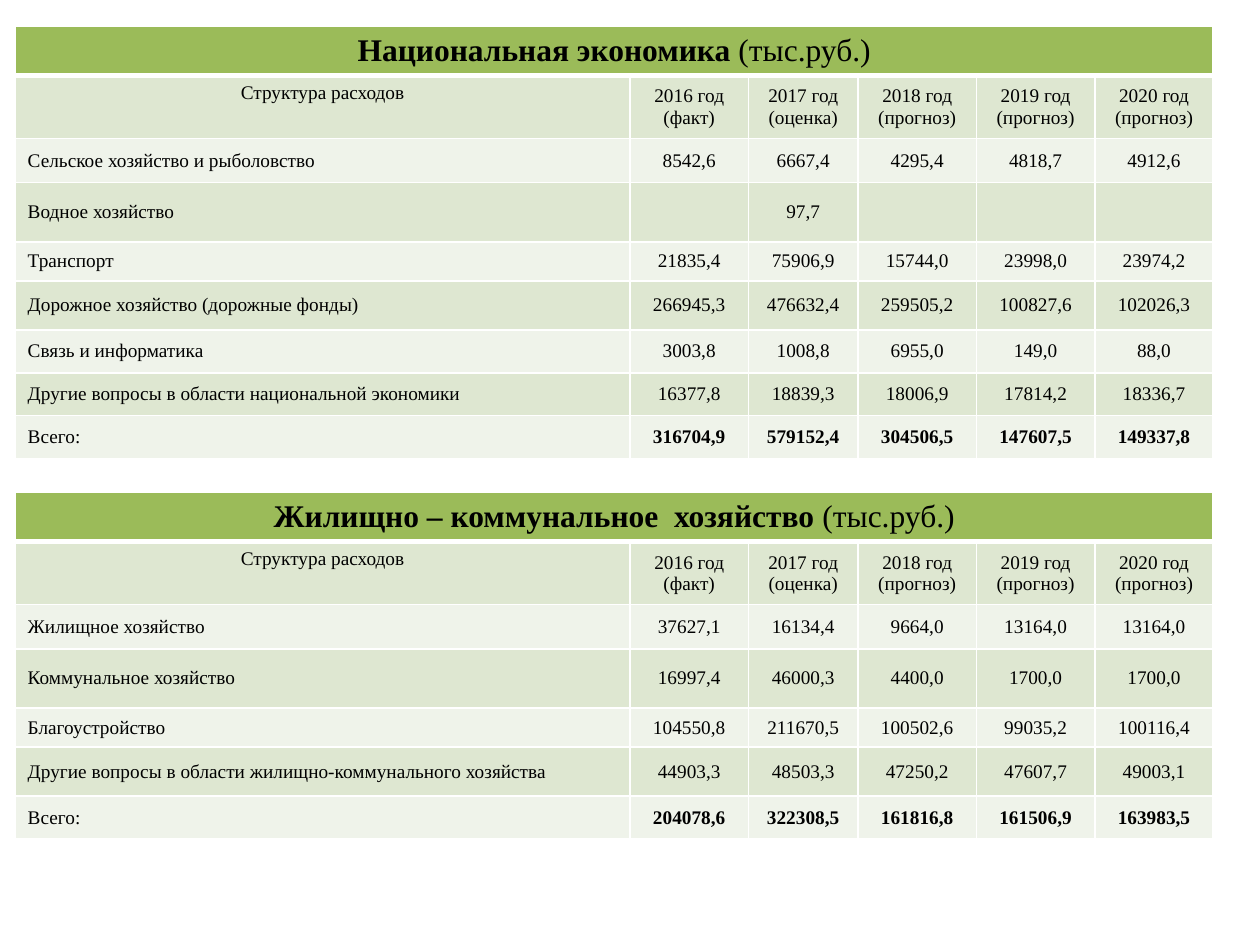
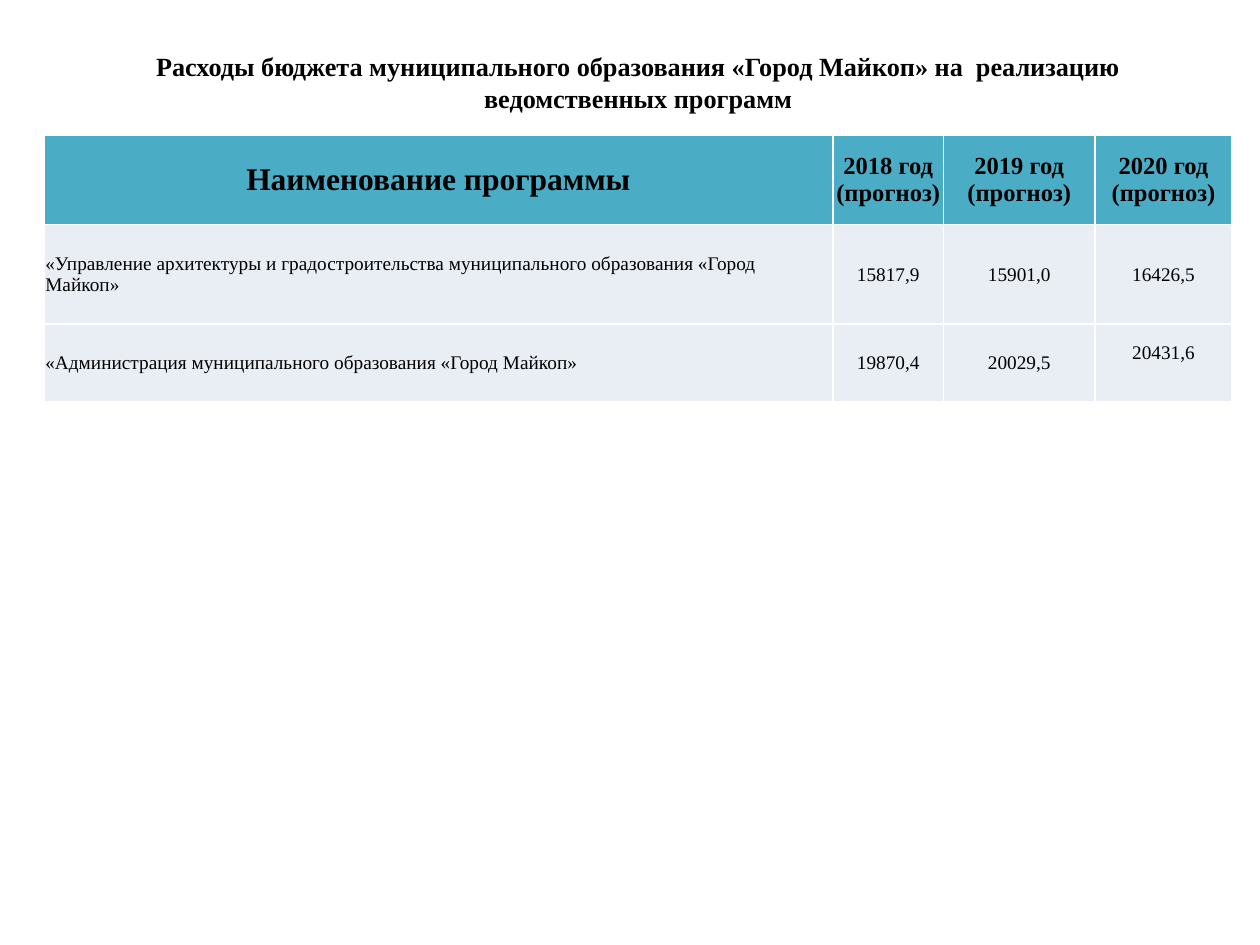
"""Builds two budget slides with expenditure tables."""
from lxml.etree import SubElement
from pptx import Presentation
from pptx.dml.color import RGBColor
from pptx.enum.text import MSO_ANCHOR, PP_ALIGN
from pptx.oxml.ns import qn
from pptx.util import Inches, Pt

COLORS = {
    "text": "000000", "border": "FFFFFF",
    "green": "9BBB59", "green_dark": "DEE7D1", "green_light": "EFF3EA",
    "teal": "4BACC6", "blue_light": "E9EDF4",
}
FONT = "Times New Roman"
GRID_COLUMNS, GRID_ROWS = 100, 75

YEARS = ["2016 год\n(факт)", "2017 год\n(оценка)", "2018 год\n(прогноз)",
         "2019 год\n(прогноз)", "2020 год\n(прогноз)"]
ECONOMY = [
    ("Сельское хозяйство и рыболовство", "8542,6|6667,4|4295,4|4818,7|4912,6"),
    ("Водное хозяйство", "|97,7|||"),
    ("Транспорт", "21835,4|75906,9|15744,0|23998,0|23974,2"),
    ("Дорожное хозяйство (дорожные фонды)", "266945,3|476632,4|259505,2|100827,6|102026,3"),
    ("Связь и информатика", "3003,8|1008,8|6955,0|149,0|88,0"),
    ("Другие вопросы в области национальной экономики", "16377,8|18839,3|18006,9|17814,2|18336,7"),
    ("Всего:", "316704,9|579152,4|304506,5|147607,5|149337,8"),
]
HOUSING = [
    ("Жилищное хозяйство", "37627,1|16134,4|9664,0|13164,0|13164,0"),
    ("Коммунальное хозяйство", "16997,4|46000,3|4400,0|1700,0|1700,0"),
    ("Благоустройство", "104550,8|211670,5|100502,6|99035,2|100116,4"),
    ("Другие вопросы в области жилищно-коммунального хозяйства", "44903,3|48503,3|47250,2|47607,7|49003,1"),
    ("Всего:", "204078,6|322308,5|161816,8|161506,9|163983,5"),
]
PROGRAMS = [
    ("«Управление архитектуры и градостроительства муниципального образования «Город Майкоп»",
     "15817,9|15901,0|16426,5"),
    ("«Администрация муниципального образования «Город Майкоп»", "19870,4|20029,5|20431,6"),
]
SECTOR_WIDTHS = [48.8, 9.4, 8.7, 9.4, 9.4, 9.4]
SECTOR_HEIGHTS = [3.9, 5, 3.5, 4.7, 3.1, 3.9, 3.4, 3.4, 3.4]


def write(frame, text, size=11, bold=False, centered=True, note=""):
    """Write one paragraph per line, with an optional regular-weight note at the end."""
    for index, line in enumerate(text.split("\n")):
        paragraph = frame.add_paragraph() if index else frame.paragraphs[0]
        paragraph.alignment = PP_ALIGN.CENTER if centered else PP_ALIGN.LEFT
        for content, weight in ((line, bold), (note, False)):
            if content:
                run = paragraph.add_run()
                run.text = content
                run.font.name, run.font.size, run.font.bold = FONT, Pt(size), weight
                run.font.color.rgb = RGBColor.from_string(COLORS["text"])


class Deck:
    """Holds the presentation, its grid and the current slide."""

    def __init__(self):
        """Start a 4:3 presentation."""
        self.presentation = Presentation()
        self.presentation.slide_width, self.presentation.slide_height = Inches(10), Inches(7.5)
        self.slide = None

    def columns(self, count):
        """Convert grid columns to a length."""
        return int(self.presentation.slide_width * count / GRID_COLUMNS)

    def rows(self, count):
        """Convert grid rows to a length."""
        return int(self.presentation.slide_height * count / GRID_ROWS)

    def new_slide(self):
        """Add a blank slide and make it current."""
        self.slide = self.presentation.slides.add_slide(self.presentation.slide_layouts[6])

    def title(self, text, left, top, width, height):
        """Add a bold centred slide title."""
        box = self.slide.shapes.add_textbox(
            self.columns(left), self.rows(top), self.columns(width), self.rows(height))
        box.text_frame.word_wrap = True
        write(box.text_frame, text, size=15, bold=True)

    def table(self, left, top, widths, heights):
        """Add a plain table with the given column widths and row heights."""
        table = self.slide.shapes.add_table(
            len(heights), len(widths), self.columns(left), self.rows(top),
            self.columns(sum(widths)), self.rows(sum(heights))).table
        table.first_row = table.horz_banding = False
        for column, width in zip(table.columns, widths):
            column.width = self.columns(width)
        for row, height in zip(table.rows, heights):
            row.height = self.rows(height)
        return table

    def cell(self, cell, text, fill, bottom_line=1, tight=False, **text_format):
        """Border, fill and write one table cell."""
        properties = cell._tc.get_or_add_tcPr()
        for side, width in (("L", 1), ("R", 1), ("T", 1), ("B", bottom_line)):
            line = SubElement(properties, qn(f"a:ln{side}"), w=str(Pt(width)))
            SubElement(SubElement(line, qn("a:solidFill")), qn("a:srgbClr"), val=COLORS["border"])
        cell.fill.solid()
        cell.fill.fore_color.rgb = RGBColor.from_string(COLORS[fill])
        cell.vertical_anchor = MSO_ANCHOR.MIDDLE
        if tight:
            cell.margin_left = cell.margin_right = cell.margin_top = self.columns(0.1)
            cell.margin_bottom = 0
        write(cell.text_frame, text, **text_format)

    def sector_table(self, top, heading, records):
        """Add a green expenditure table for one budget sector."""
        table = self.table(1.2, top, SECTOR_WIDTHS, SECTOR_HEIGHTS[:len(records) + 2])
        table.cell(0, 0).merge(table.cell(0, len(YEARS)))
        self.cell(table.cell(0, 0), heading, "green", bottom_line=3,
                  size=18, bold=True, note="(тыс.руб.)")
        lines = [["Структура расходов", *YEARS]]
        lines += [[name, *values.split("|")] for name, values in records]
        for row, line in enumerate(lines, 1):
            for column, text in enumerate(line):
                self.cell(table.cell(row, column), text,
                          "green_dark" if row % 2 else "green_light",
                          bold=row == len(lines) and column > 0,
                          centered=row == 1 or column > 0)
        table.cell(1, 0).vertical_anchor = MSO_ANCHOR.TOP

    def program_table(self):
        """Add the teal table of departmental programmes."""
        table = self.table(3.5, 10.7, [62.6, 8.8, 12, 10.9], [7.1, 7.9, 6.2])
        for column, text in enumerate(["Наименование программы", *YEARS[2:]]):
            self.cell(table.cell(0, column), text, "teal", tight=True,
                      size=14 if column else 18, bold=True)
        for row, (name, values) in enumerate(PROGRAMS, 1):
            for column, text in enumerate([name, *values.split("|")]):
                self.cell(table.cell(row, column), text, "blue_light", tight=True,
                          centered=column > 0)
        table.cell(2, 3).margin_bottom = self.rows(1.6)


def main():
    """Build both slides and save them."""
    deck = Deck()
    deck.new_slide()
    deck.sector_table(2.1, "Национальная экономика ", ECONOMY)
    deck.sector_table(39.1, "Жилищно – коммунальное  хозяйство ", HOUSING)
    deck.new_slide()
    deck.title("Расходы бюджета муниципального образования «Город Майкоп» на  реализацию\n"
               "ведомственных программ", 3.4, 3.5, 94.5, 6.1)
    deck.program_table()
    deck.presentation.save("out.pptx")


if __name__ == "__main__":
    main()
